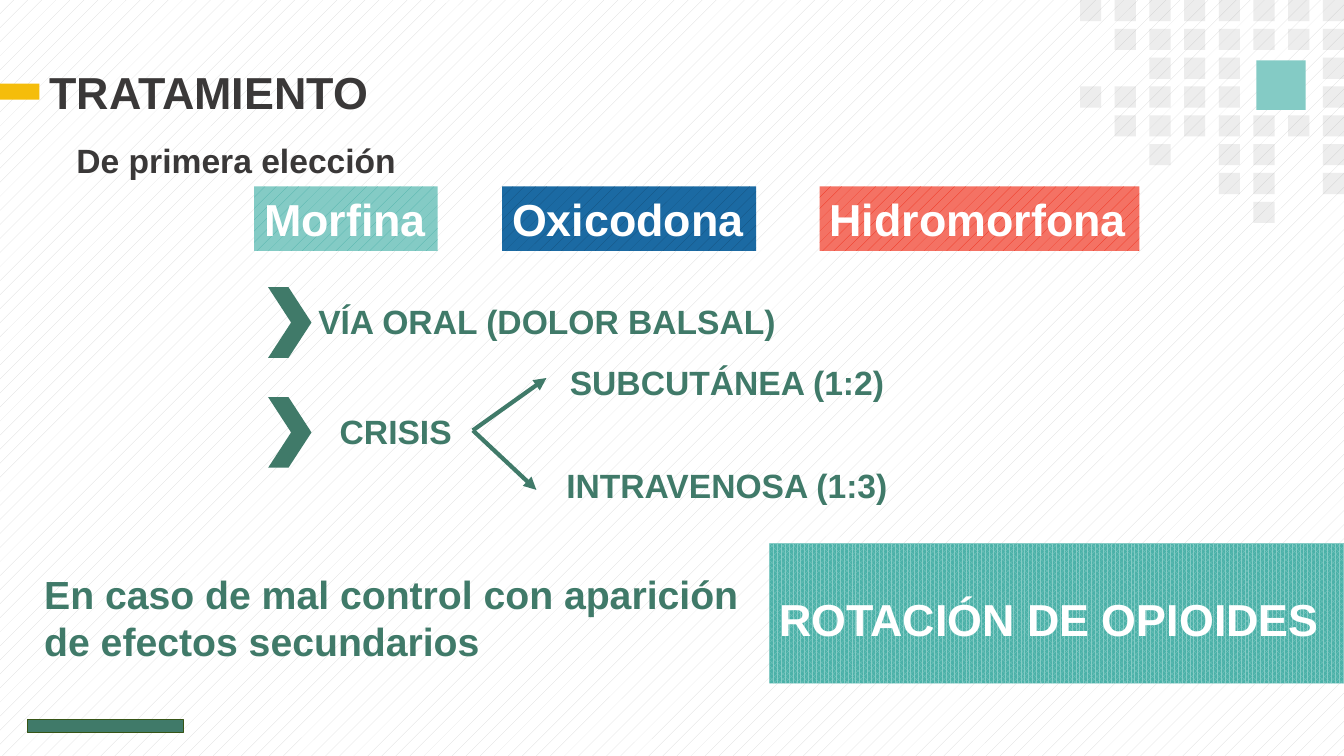
from lxml import etree
from pptx import Presentation
from pptx import util as u
from pptx.dml.color import RGBColor
from pptx.enum import dml, shapes, text
from pptx.oxml.ns import qn

W, H = 13.33, 7.5
HUES = {
    "ink": "3A3838", "green": "407A69", "edge": "365516", "gold": "F5BD0B",
    "white": "FFFFFF", "gray": "D9D9D9", "dot": "A5A5A5",
    "aqua": "84CBC5", "teal": "4BB1A8", "blue": "1B6AA3", "navy": "144F7A",
    "coral": "F47264", "red": "EE2914",
}
TITLE = "TRATAMIENTO"
DOTS = [
    "########",
    ".#######",
    "..###..#",
    "#####..#",
    ".#######",
    "..#.##.#",
    "....##.#",
    ".....#..",
]
# Drug, left, width, pattern colour, ground colour
DRUGS = [
    ("Morfina", 2.52, 1.82, "teal", "aqua"),
    ("Oxicodona", 4.98, 2.52, "navy", "blue"),
    ("Hidromorfona", 8.13, 3.17, "red", "coral"),
]
# Text, box, size, colour, centred
NOTES = [
    ("De primera elección", (0.66, 1.34, 6.32, 0.5), 24, "ink", False),
    ("VÍA ORAL (DOLOR BALSAL)", (2.04, 2.94, 6.77, 0.5), 24, "green", True),
    ("CRISIS", (0.54, 4.03, 6.77, 0.5), 24, "green", True),
    ("SUBCUTÁNEA (1:2)", (4.87, 3.54, 4.68, 0.5), 24, "green", True),
    ("INTRAVENOSA (1:3)", (4.87, 4.56, 4.68, 0.5), 24, "green", True),
    ("ROTACIÓN DE OPIOIDES", (7.63, 5.82, 5.93, 0.64), 32, "white", False),
    ("En caso de mal control con aparición de efectos secundarios",
     (0.34, 5.61, 7.17, 1.04), 28, "green", False),
]
CHEVRONS = [2.85, 3.94]
FORK = (4.69, 4.27)
TIPS = [(5.42, 3.75), (5.32, 4.86)]


def rgb(hue):
    return RGBColor.from_string(HUES[hue])


def inch(*nums):
    return [u.Inches(n) for n in nums]


def hatch(fill, kind, fore, back):
    """Give a fill a two-colour pattern."""
    fill.patterned()
    fill.pattern = kind
    fill.fore_color.rgb = rgb(fore)
    fill.back_color.rgb = rgb(back)


def block(slide, box, hue=None, kind=shapes.MSO_SHAPE.RECTANGLE):
    """Add a shape without line or shadow."""
    form = slide.shapes.add_shape(kind, *inch(*box))
    form.shadow.inherit = False
    form.line.fill.background()
    if hue:
        form.fill.solid()
        form.fill.fore_color.rgb = rgb(hue)
    return form


def write(form, words, size, hue, mid=False, wrap=True):
    frame = form.text_frame
    frame.word_wrap = wrap
    frame.auto_size = text.MSO_AUTO_SIZE.SHAPE_TO_FIT_TEXT
    frame.vertical_anchor = text.MSO_ANCHOR.TOP
    para = frame.paragraphs[0]
    para.text = words
    para.alignment = text.PP_ALIGN.CENTER if mid else text.PP_ALIGN.LEFT
    font = para.font
    font.name, font.size, font.bold = "Arial", u.Pt(size), True
    font.color.rgb = rgb(hue)


def dots(slide):
    side, across, down = 0.21, 0.344, 0.286
    left = W - side - 7 * across
    for row, line in enumerate(DOTS):
        for col, mark in enumerate(line):
            if mark == "#":
                dot = block(slide, (left + col * across, row * down, side, side), "dot")
                tint = dot.fill._xPr.find(qn("a:solidFill"))[0]
                etree.SubElement(tint, qn("a:alpha")).set("val", "20000")


def arrow(slide, start, end):
    line = slide.shapes.add_connector(
        shapes.MSO_CONNECTOR.STRAIGHT, *inch(*start, *end))
    line.line.color.rgb = rgb("green")
    line.line.width = u.Pt(3)
    etree.SubElement(line.line._get_or_add_ln(), qn("a:tailEnd")).set("type", "triangle")
    etree.SubElement(line._element.spPr, qn("a:effectLst"))


def main():
    deck = Presentation()
    deck.slide_width, deck.slide_height = inch(W, H)
    slide = deck.slides.add_slide(deck.slide_layouts[5])
    hatch(slide.background.fill, dml.MSO_PATTERN.PERCENT_5, "gray", "white")

    block(slide, (12.46, 0.6, 0.49, 0.49), "aqua")
    dots(slide)
    bar = block(slide, (0.27, 7.14, 1.55, 0.13), "green")
    bar.line.color.rgb = rgb("edge")
    bar.line.width = u.Pt(0.75)

    title = slide.shapes.title
    title.left, title.top, title.width, title.height = inch(0.39, 0.59, 3.9, 0.64)
    write(title, TITLE, 32, "ink")
    block(slide, (0, 0.83, 0.39, 0.16), "gold")

    for drug, left, wide, fore, back in DRUGS:
        tag = block(slide, (left, 1.85, wide, 0.64))
        hatch(tag.fill, dml.MSO_PATTERN.PERCENT_10, fore, back)
        write(tag, drug, 32, "white", wrap=False)

    for top in CHEVRONS:
        mark = block(slide, (2.66, top, 0.43, 0.7), "green", shapes.MSO_SHAPE.CHEVRON)
        mark.adjustments[0] = 0.53
    for tip in TIPS:
        arrow(slide, FORK, tip)

    panel = block(slide, (7.63, 5.39, W - 7.63, 1.39))
    hatch(panel.fill, dml.MSO_PATTERN.PERCENT_75, "aqua", "teal")
    for words, box, size, hue, mid in NOTES:
        write(slide.shapes.add_textbox(*inch(*box)), words, size, hue, mid)

    deck.save("out.pptx")


if __name__ == "__main__":
    main()
